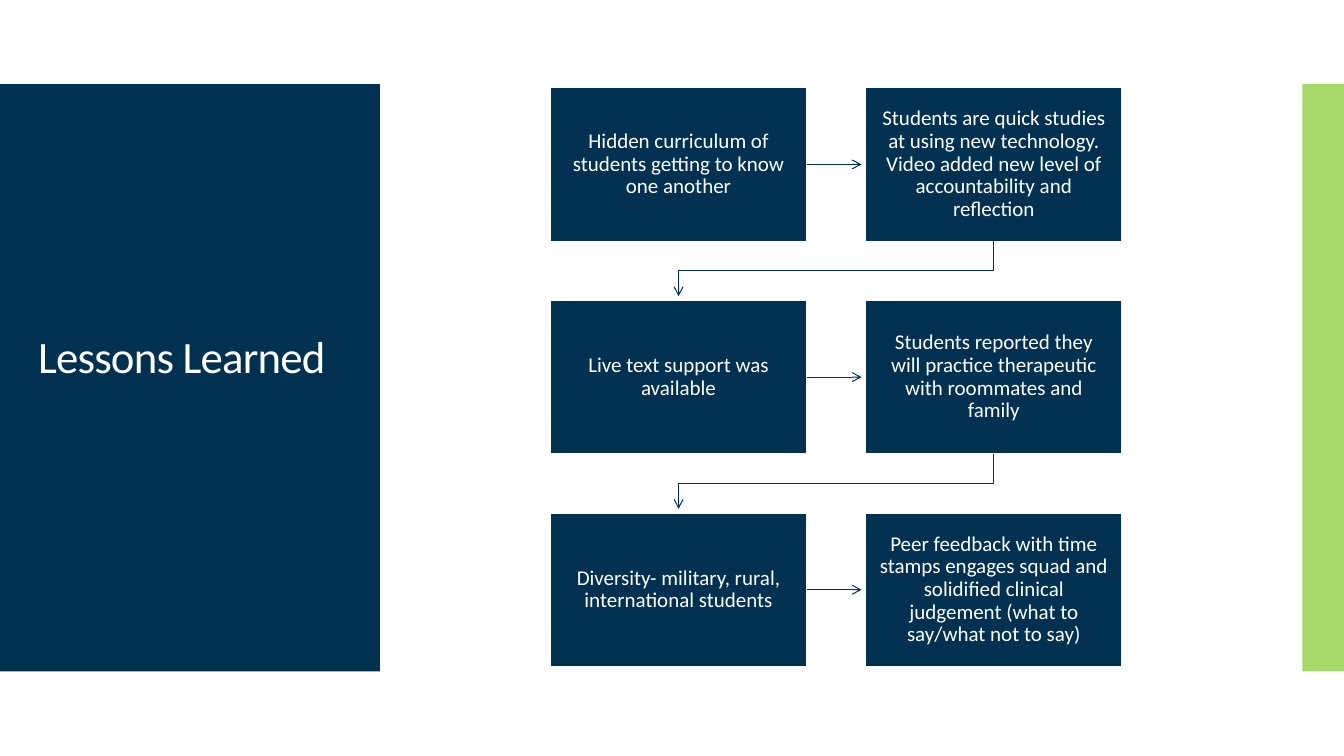
from pptx import Presentation
from pptx.dml.color import RGBColor
from pptx.enum.shapes import MSO_CONNECTOR as Connector, MSO_SHAPE as Shape
from pptx.enum.text import MSO_ANCHOR as Anchor, PP_ALIGN as Align
from pptx.oxml.ns import qn
from pptx.util import Pt
from lxml.etree import SubElement

COLORS = {"navy": "003150", "green": "A5D867", "white": "FFFFFF"}
FONT = "Calibri"
LESSONS = [
    ("Hidden curriculum of students getting to know one another",
     "Students are quick studies at using new technology. Video added new "
     "level of accountability and reflection"),
    ("Live text support was available",
     "Students reported they will practice therapeutic with roommates and family"),
    ("Diversity- military, rural, international students",
     "Peer feedback with time stamps engages squad and solidified clinical "
     "judgement (what to say/what not to say)"),
]
BOX_LEFT, BOX_TOP = 393.2, 62.6
BOX_WIDTH, BOX_HEIGHT = 183, 109.7
COLUMN_STEP, ROW_STEP = 225.2, 151.9
ARROW_GAP = 3


def color(name):
    return RGBColor.from_string(COLORS[name])


def add_rectangle(slide, left, top, width, height, fill):
    shape = slide.shapes.add_shape(
        Shape.RECTANGLE, Pt(left), Pt(top), Pt(width), Pt(height))
    shape.shadow.inherit = False
    shape.fill.solid()
    shape.fill.fore_color.rgb = color(fill)
    shape.line.fill.background()
    return shape


def write_text(paragraph, text, size):
    paragraph.line_spacing = 0.9
    run = paragraph.add_run()
    run.text = text
    run.font.name = FONT
    run.font.size = Pt(size)
    run.font.color.rgb = color("white")
    return run


def format_title(slide, text):
    title = slide.shapes.title
    title.left, title.top, title.width, title.height = (
        Pt(20), Pt(90), Pt(223), Pt(187))
    frame = title.text_frame
    frame.word_wrap = True
    frame.vertical_anchor = Anchor.BOTTOM
    paragraph = frame.paragraphs[0]
    paragraph.alignment = Align.LEFT
    run = write_text(paragraph, text, 32)
    run._r.get_or_add_rPr().set("spc", "-60")
    slide.shapes._spTree.append(title._element)


def add_lesson(slide, row, column, text):
    box = add_rectangle(
        slide, BOX_LEFT + column * COLUMN_STEP, BOX_TOP + row * ROW_STEP,
        BOX_WIDTH, BOX_HEIGHT, "navy")
    box.line.color.rgb = color("white")
    box.line.width = Pt(0.85)
    frame = box.text_frame
    frame.word_wrap = True
    frame.vertical_anchor = Anchor.MIDDLE
    frame.margin_left = frame.margin_right = Pt(9)
    frame.margin_top = frame.margin_bottom = Pt(9.4)
    paragraph = frame.paragraphs[0]
    paragraph.alignment = Align.CENTER
    write_text(paragraph, text, 15)
    return box


def style_arrow(arrow):
    arrow.line.color.rgb = color("navy")
    arrow.line.width = Pt(0.75)
    SubElement(arrow.line._get_or_add_ln(), qn("a:tailEnd"), type="arrow")


def add_row_arrow(slide, source, target):
    middle = source.top + source.height // 2
    arrow = slide.shapes.add_connector(
        Connector.STRAIGHT, source.left + source.width, middle,
        target.left - Pt(ARROW_GAP), middle)
    arrow.begin_connect(source, 3)
    style_arrow(arrow)
    SubElement(arrow._element.spPr, qn("a:effectLst"))


def add_return_arrow(slide, source, target):
    start_x = source.left + source.width // 2
    end_x = target.left + target.width // 2
    start_y = source.top + source.height
    bend_y = (start_y + target.top) // 2
    builder = slide.shapes.build_freeform(start_x, start_y)
    builder.add_line_segments(
        [(start_x, bend_y), (end_x, bend_y),
         (end_x, target.top - Pt(ARROW_GAP))], close=False)
    arrow = builder.convert_to_shape()
    arrow.shadow.inherit = False
    arrow.fill.background()
    style_arrow(arrow)


def main():
    """Build the lessons learned slide."""
    presentation = Presentation()
    presentation.slide_width, presentation.slide_height = Pt(960), Pt(540)
    slide = presentation.slides.add_slide(presentation.slide_layouts[5])
    add_rectangle(slide, 0, 60, 271.3, 419.5, "navy")
    add_rectangle(slide, 930.4, 60, 29.6, 419.5, "green")
    format_title(slide, "Lessons Learned")
    rows = [[add_lesson(slide, row, column, text)
             for column, text in enumerate(texts)]
            for row, texts in enumerate(LESSONS)]
    for left_box, right_box in rows:
        add_row_arrow(slide, left_box, right_box)
    for upper, lower in zip(rows, rows[1:]):
        add_return_arrow(slide, upper[1], lower[0])
    presentation.save("out.pptx")


if __name__ == "__main__":
    main()
